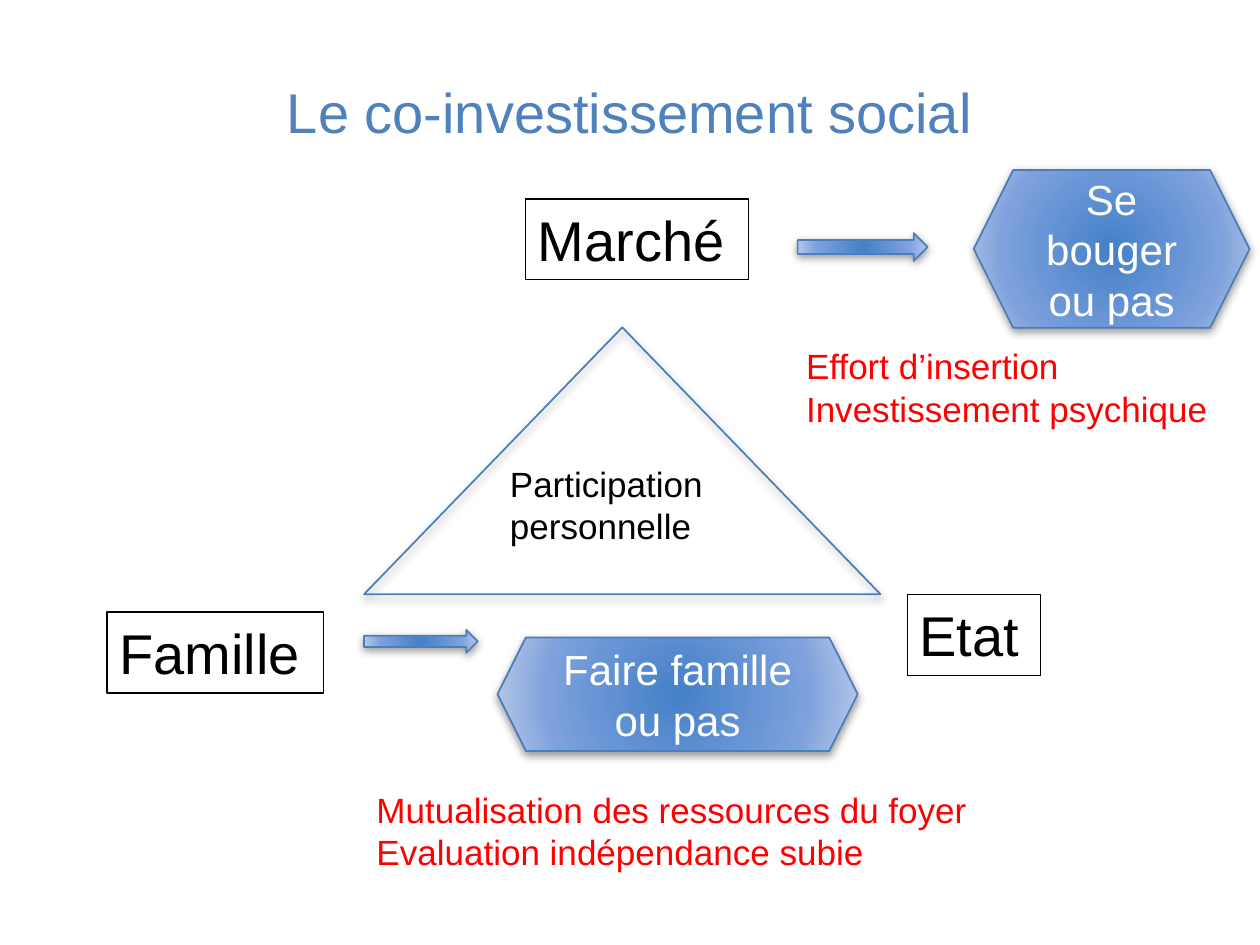
import pptx
import pptx.dml.color
import pptx.enum.shapes
import pptx.enum.text
import pptx.oxml
import pptx.oxml.ns
import pptx.util

Cm = pptx.util.Cm
Shapes = pptx.enum.shapes.MSO_SHAPE
Align = pptx.enum.text.PP_ALIGN
Anchor = pptx.enum.text.MSO_ANCHOR

NAMESPACE = pptx.oxml.ns.nsdecls("a")
BLUE, OUTLINE = "4F81BD", "4B7EBC"
BLACK, WHITE, RED = "000000", "FFFFFF", "FF0000"
GRADIENT = [(0, "4480C8"), (69, "7DA1DC"), (100, "BACAE9")]


def color(value):
    return pptx.dml.color.RGBColor.from_string(value)


def write_text(shape, text, size=20, font_color=BLACK, align=Align.LEFT,
               anchor=Anchor.TOP):
    """Put one paragraph in the shape for each line of text."""
    frame = shape.text_frame
    frame.word_wrap = True
    frame.vertical_anchor = anchor
    frame.text = text
    for paragraph in frame.paragraphs:
        paragraph.alignment = align
        font = paragraph.runs[0].font
        font.name = "Arial"
        font.size = pptx.util.Pt(size)
        font.color.rgb = color(font_color)


def add_text(slide, box, text, **text_format):
    write_text(slide.shapes.add_textbox(*map(Cm, box)), text, **text_format)


def add_outlined(slide, kind, box, line_color=OUTLINE, width=1):
    shape = slide.shapes.add_shape(kind, *map(Cm, box))
    shape.shadow.inherit = False
    shape.fill.background()
    shape.line.color.rgb = color(line_color)
    shape.line.width = pptx.util.Pt(width)
    return shape


def add_shadow(shape):
    effects = shape._element.spPr.find(pptx.oxml.ns.qn("a:effectLst"))
    effects.append(pptx.oxml.parse_xml(
        f'<a:outerShdw {NAMESPACE} blurRad="63500" dist="25400" dir="5400000" '
        f'rotWithShape="0"><a:srgbClr val="{BLACK}"><a:alpha val="40000"/>'
        '</a:srgbClr></a:outerShdw>'))


def add_glossy(slide, kind, box):
    """Add a shape with a radial blue gradient and a soft shadow."""
    shape = add_outlined(slide, kind, box)
    stops = "".join(f'<a:gs pos="{position * 1000}"><a:srgbClr val="{value}"/></a:gs>'
                    for position, value in GRADIENT)
    gradient = pptx.oxml.parse_xml(
        f'<a:gradFill {NAMESPACE} rotWithShape="1"><a:gsLst>{stops}</a:gsLst>'
        '<a:path path="circle"><a:fillToRect l="100000" t="100000" '
        'r="100000" b="100000"/></a:path></a:gradFill>')
    properties = shape._element.spPr
    no_fill = properties.find(pptx.oxml.ns.qn("a:noFill"))
    properties.replace(no_fill, gradient)
    add_shadow(shape)
    return shape


def add_triangle(slide, left, top, width, height):
    # Triangle with its label in the middle
    add_shadow(add_outlined(slide, Shapes.ISOSCELES_TRIANGLE,
                            (left, top, width, height)))
    add_text(slide, (left + 2.69, top + 2.59, 5.05, 1.96),
             "Participation personnelle")


def add_pole(slide, left, top, width, name):
    # Framed name at one corner of the triangle
    shape = add_outlined(slide, Shapes.RECTANGLE, (left, top, width, 1.63),
                         line_color=BLACK, width=0.75)
    write_text(shape, name, size=32)


def add_choice(slide, left, top, arrow_size, hexagon, choice, comment, remarks):
    """Add an arrow; hexagon and comment boxes are relative to its corner."""
    def place(box):
        return (left + box[0], top + box[1], *box[2:])

    # Arrow to the choice
    add_glossy(slide, Shapes.RIGHT_ARROW, (left, top, *arrow_size))
    # Choice
    shape = add_glossy(slide, Shapes.HEXAGON, place(hexagon))
    write_text(shape, choice, size=24, font_color=WHITE, align=Align.CENTER,
               anchor=Anchor.MIDDLE)
    # Remarks below it
    add_text(slide, place(comment), remarks, font_color=RED)


def main():
    presentation = pptx.Presentation()
    presentation.slide_width = Cm(25.4)
    presentation.slide_height = Cm(19.05)
    slide = presentation.slides.add_slide(presentation.slide_layouts[6])

    # Title
    add_text(slide, (1.52, 1.09, 22.35, 1.96), "Le co-investissement social",
             size=32, font_color=BLUE, align=Align.CENTER, anchor=Anchor.BOTTOM)

    # Triangle and its three poles
    add_triangle(slide, 7.34, 6.6, 10.41, 5.38)
    add_pole(slide, 10.59, 4.01, 4.5, "Marché")
    add_pole(slide, 2.16, 12.34, 4.37, "Famille")
    add_pole(slide, 18.29, 11.99, 2.69, "Etat")

    # Choices beside the market and the family
    add_choice(slide, 16.08, 4.7, (2.62, 0.56),
               (3.55, -1.27, 5.56, 3.18), "Se bouger ou pas",
               (-0.08, 2.13, 9.14, 1.96),
               "Effort d’insertion\nInvestissement psychique")
    add_choice(slide, 7.34, 12.7, (2.29, 0.46),
               (2.69, 0.15, 7.26, 2.29), "Faire famille ou pas",
               (0, 3.07, 13.31, 2.74),
               "Mutualisation des ressources du foyer\nEvaluation indépendance subie")

    presentation.save("out.pptx")


if __name__ == "__main__":
    main()
